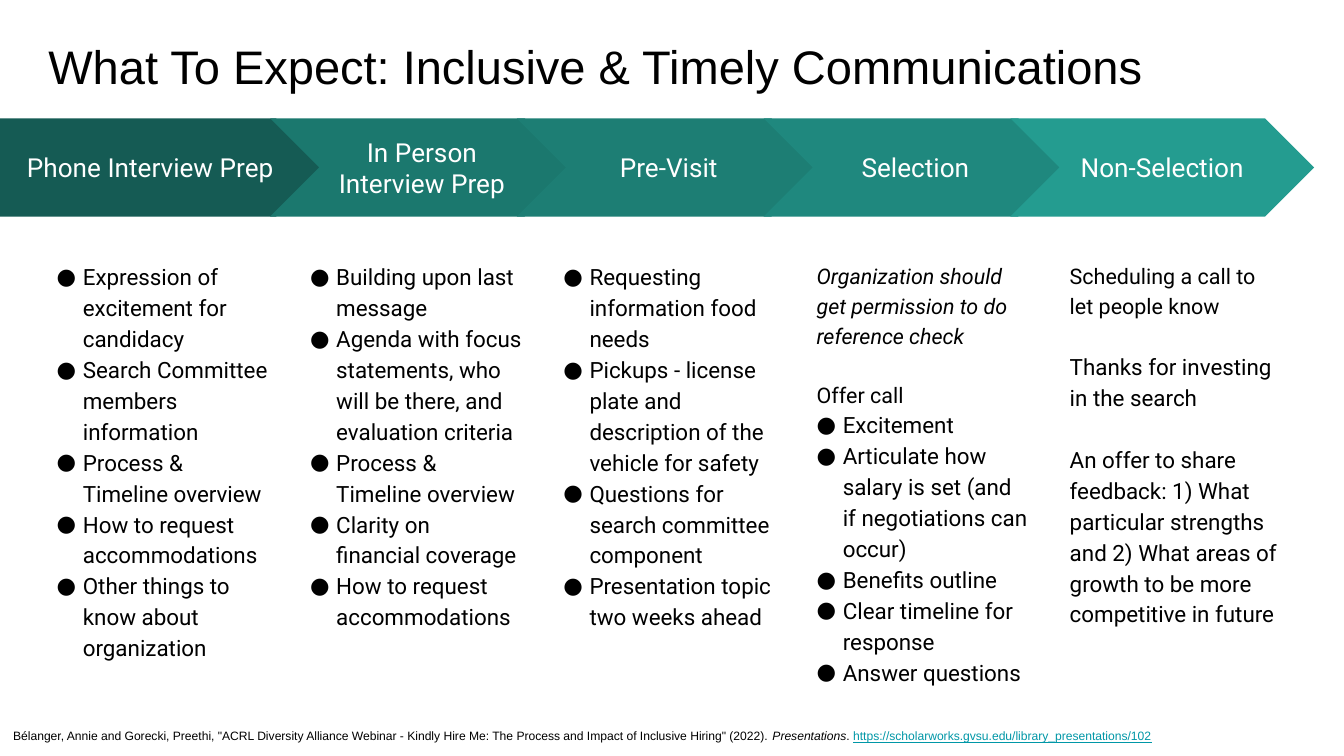
from dataclasses import dataclass

import lxml.etree
import pptx
import pptx.dml.color
import pptx.enum.shapes
import pptx.enum.text
import pptx.oxml.ns
import pptx.util

Pt = pptx.util.Pt
Color = pptx.dml.color.RGBColor.from_string
Anchor = pptx.enum.text.MSO_ANCHOR
Align = pptx.enum.text.PP_ALIGN
Preset = pptx.enum.shapes.MSO_SHAPE


@dataclass(frozen=True)
class Theme:
    heading_font: str = "Arial"
    body_font: str = "Roboto"
    ink: str = "000000"
    light: str = "FFFFFF"
    link: str = "0097A7"
    title_size: float = 25.2
    stage_size: float = 14
    list_size: float = 12
    note_size: float = 11.5
    source_size: float = 6.5


@dataclass(frozen=True)
class Line:
    text: str
    bullet: bool = True
    size: float = Theme.list_size
    italic: bool = False
    gap: float = 0


@dataclass(frozen=True)
class Stage:
    name: str
    fill: str
    lines: list[Line]


@dataclass(frozen=True)
class Area:
    left: float
    top: float
    width: float
    height: float


THEME = Theme()
INSET = 7.2
ARROW_TOP, ARROW_HEIGHT = 63.4, 52.6
FIRST_ARROW_WIDTH, ARROW_WIDTH = 174.2, 162.7
SECOND_ARROW_LEFT, ARROW_STEP = 144.7, 132.2
LIST_LEFT, LIST_STEP = 23.2, 135.7

STAGES = [
    Stage("Phone Interview Prep", "155B54", [
        Line("Expression of excitement for candidacy"),
        Line("Search Committee members information"),
        Line("Process & Timeline overview"),
        Line("How to request accommodations"),
        Line("Other things to know about organization"),
    ]),
    Stage("In Person Interview Prep", "1B786E", [
        Line("Building upon last message"),
        Line("Agenda with focus statements, who will be there, and evaluation criteria"),
        Line("Process & Timeline overview"),
        Line("Clarity on\vfinancial coverage"),
        Line("How to request accommodations"),
    ]),
    Stage("Pre-Visit", "1D7E74", [
        Line("Requesting information food needs"),
        Line("Pickups - license plate and description of the vehicle for safety"),
        Line("Questions for search committee component"),
        Line("Presentation topic two weeks ahead"),
    ]),
    Stage("Selection", "1F887E", [
        Line("Organization should get permission to do reference check",
             bullet=False, size=THEME.note_size, italic=True),
        Line("Offer call", bullet=False, size=THEME.note_size, gap=15.8),
        Line("Excitement"),
        Line("Articulate how salary is set (and if negotiations can occur)"),
        Line("Benefits outline"),
        Line("Clear timeline for response"),
        Line("Answer questions"),
    ]),
    Stage("Non-Selection", "249C90", [
        Line("Scheduling a call to let people know", bullet=False, size=THEME.note_size),
        Line("Thanks for investing in the search", bullet=False, gap=16.5),
        Line("An offer to share feedback: 1) What particular strengths and "
             "2) What areas of growth to be more competitive in future",
             bullet=False, gap=16.5),
    ]),
]


def place(box, area: Area) -> None:
    box.left, box.top = Pt(area.left), Pt(area.top)
    box.width, box.height = Pt(area.width), Pt(area.height)


def set_frame(box, anchor=Anchor.TOP):
    frame = box.text_frame
    frame.word_wrap = True
    frame.auto_size = pptx.enum.text.MSO_AUTO_SIZE.NONE
    frame.vertical_anchor = anchor
    frame.margin_left = frame.margin_right = Pt(INSET)
    frame.margin_top = frame.margin_bottom = Pt(INSET)
    return frame


def set_font(para, name: str, size: float, color: str, italic: bool = False) -> None:
    para.font.name = name
    para.font.size = Pt(size)
    para.font.bold = False
    para.font.italic = italic
    para.font.color.rgb = Color(color)


def set_bullet(para, shown: bool) -> None:
    properties = para._p.get_or_add_pPr()
    qualified = pptx.oxml.ns.qn
    properties.set("marL", str(Pt(14) if shown else 0))
    properties.set("indent", str(Pt(-15) if shown else 0))
    if not shown:
        lxml.etree.SubElement(properties, qualified("a:buNone"))
        return
    color = lxml.etree.SubElement(properties, qualified("a:buClr"))
    lxml.etree.SubElement(color, qualified("a:srgbClr"), val=THEME.ink)
    lxml.etree.SubElement(properties, qualified("a:buFont"), typeface=THEME.body_font)
    lxml.etree.SubElement(properties, qualified("a:buChar"), char="●")


def fill_list(box, lines: list[Line]) -> None:
    frame = set_frame(box)
    for index, line in enumerate(lines):
        para = frame.add_paragraph() if index else frame.paragraphs[0]
        para.text = line.text
        para.alignment = Align.LEFT
        para.line_spacing = 1.15
        para.space_before = Pt(line.gap)
        set_bullet(para, line.bullet)
        set_font(para, THEME.body_font, line.size, THEME.ink, line.italic)


def draw_arrow(slide, stage: Stage, index: int) -> None:
    left = SECOND_ARROW_LEFT + (index - 1) * ARROW_STEP if index else 0
    width = ARROW_WIDTH if index else FIRST_ARROW_WIDTH
    preset = Preset.CHEVRON if index else Preset.PENTAGON
    arrow = slide.shapes.add_shape(preset, Pt(left), Pt(ARROW_TOP), Pt(width), Pt(ARROW_HEIGHT))
    arrow.adjustments[0] = 0.5
    arrow.shadow.inherit = False
    arrow.fill.solid()
    arrow.fill.fore_color.rgb = Color(stage.fill)
    arrow.line.fill.background()
    para = set_frame(arrow, Anchor.MIDDLE).paragraphs[0]
    para.text = stage.name
    para.alignment = Align.CENTER
    set_font(para, THEME.body_font, THEME.stage_size, THEME.light)


def draw_title(slide) -> None:
    title = slide.shapes.title
    place(title, Area(18.7, 13, 671, 45.4))
    para = set_frame(title).paragraphs[0]
    para.text = "What To Expect: Inclusive & Timely Communications"
    para.alignment = Align.LEFT
    set_font(para, THEME.heading_font, THEME.title_size, THEME.ink)


def draw_source(slide) -> None:
    box = slide.shapes.add_textbox(0, Pt(383), Pt(720), Pt(22))
    para = set_frame(box).paragraphs[0]
    set_font(para, THEME.heading_font, THEME.source_size, THEME.ink)
    para.add_run().text = (
        'Bélanger, Annie and Gorecki, Preethi, "ACRL Diversity Alliance Webinar - Kindly Hire Me: '
        'The Process and Impact of Inclusive Hiring" (2022). ')
    series = para.add_run()
    series.text = "Presentations"
    series.font.italic = True
    para.add_run().text = ". "
    address = para.add_run()
    address.text = "https://scholarworks.gvsu.edu/library_presentations/102"
    address.font.underline = True
    address.font.color.rgb = Color(THEME.link)


def main() -> None:
    deck = pptx.Presentation()
    deck.slide_width, deck.slide_height = Pt(720), Pt(405)
    # The comparison layout offers a title and four body placeholders
    slide = deck.slides.add_slide(deck.slide_layouts[4])
    draw_title(slide)

    # Stage arrows with a list below each; the last column is plain text
    bodies = [box for box in slide.placeholders if box.placeholder_format.idx > 0]
    bodies.append(slide.shapes.add_textbox(0, 0, 0, 0))
    for index, (stage, body) in enumerate(zip(STAGES, bodies)):
        draw_arrow(slide, stage, index)
        place(body, Area(LIST_LEFT + index * LIST_STEP, 131.8, 128.2, 185))
        fill_list(body, stage.lines)

    # Citation line
    draw_source(slide)
    deck.save("out.pptx")


if __name__ == "__main__":
    main()
